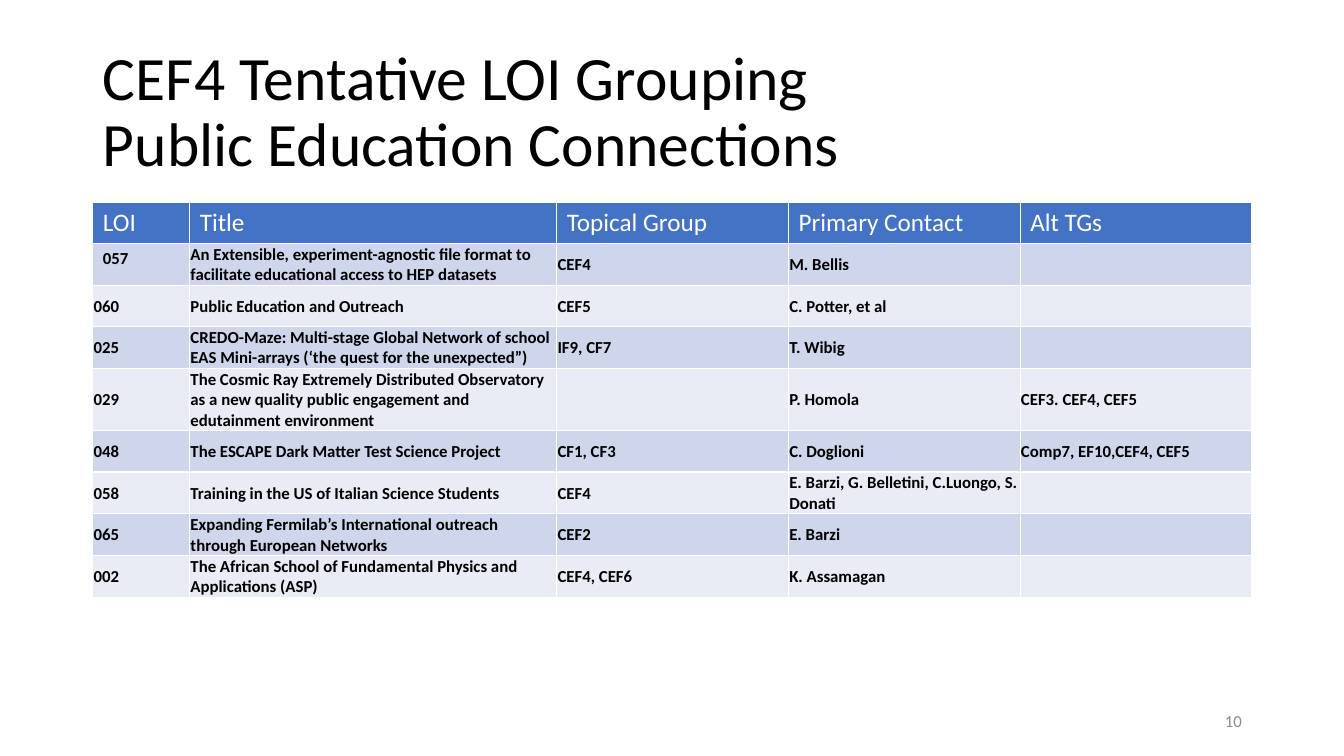
from pptx import Presentation
from pptx.dml.color import RGBColor
from pptx.enum.text import MSO_ANCHOR as Anchor, MSO_AUTO_SIZE as Fit, PP_ALIGN as Align
from pptx.util import Cm, Pt

HEADS = ["LOI", "Title", "Topical Group", "Primary Contact", "Alt TGs"]
LOIS = [
    ["057", "An Extensible, experiment-agnostic file format to facilitate educational access to HEP datasets",
     "CEF4", "M. Bellis", ""],
    ["060", "Public Education and Outreach", "CEF5", "C. Potter, et al", ""],
    ["025", "CREDO-Maze: Multi-stage Global Network of school EAS Mini-arrays (‘the quest for the unexpected”)",
     "IF9, CF7", "T. Wibig", ""],
    ["029", "The Cosmic Ray Extremely Distributed Observatory as a new quality public engagement and "
     "edutainment environment", "", "P. Homola", "CEF3. CEF4, CEF5"],
    ["048", "The ESCAPE Dark Matter Test Science Project", "CF1, CF3", "C. Doglioni",
     "Comp7, EF10,CEF4, CEF5"],
    ["058", "Training in the US of Italian Science Students", "CEF4",
     "E. Barzi, G. Belletini, C.Luongo, S. Donati", ""],
    ["065", "Expanding Fermilab’s International outreach through European Networks", "CEF2", "E. Barzi", ""],
    ["002", "The African School of Fundamental Physics and Applications (ASP)", "CEF4, CEF6",
     "K. Assamagan", ""],
]
WIDTHS = [2.44, 9.25, 5.84, 5.84, 5.84]
LEFT, WIDE = 2.34, 29.21


def color(code):
    return RGBColor.from_string(code)


def write(frame, text, size=12, ink="000000", bold=False, align=Align.LEFT, space=None, face="Calibri"):
    frame.text = text
    for para in frame.paragraphs:
        para.alignment = align
        para.line_spacing = space
        for run in para.runs:
            font = run.font
            font.name, font.size, font.bold = face, Pt(size), bold
            font.color.rgb = color(ink)


class Deck:
    blue = "4472C4"
    bands = ["CFD5EA", "E9EBF5"]
    gray = "8C8C8C"

    def __init__(self):
        self.show = Presentation()
        self.show.slide_width, self.show.slide_height = Cm(33.87), Cm(19.05)
        self.slide = self.show.slides.add_slide(self.show.slide_layouts[5])

    def title(self, text, x, y, w, h):
        shape = self.slide.shapes.title
        shape.left, shape.top, shape.width, shape.height = Cm(x), Cm(y), Cm(w), Cm(h)
        frame = shape.text_frame
        frame.auto_size, frame.vertical_anchor = Fit.NONE, Anchor.MIDDLE
        write(frame, text, size=44, space=0.9)

    def cell(self, cell, text, fill, tight=True, **style):
        cell.fill.solid()
        cell.fill.fore_color.rgb = color(fill)
        if not text:
            return
        if tight:
            cell.vertical_anchor = Anchor.MIDDLE
            cell.margin_left = cell.margin_right = cell.margin_top = Cm(0.02)
            cell.margin_bottom = Cm(0)
        write(cell.text_frame, text, **style)

    def table(self, heads, rows, widths, x, y, high):
        count = len(rows) + 1
        grid = self.slide.shapes.add_table(
            count, len(heads), Cm(x), Cm(y), Cm(sum(widths)), Cm(high * count)).table
        for col, width in zip(grid.columns, widths):
            col.width = Cm(width)
        for row in grid.rows:
            row.height = Cm(high)
        for c, head in enumerate(heads):
            self.cell(grid.cell(0, c), head, self.blue, tight=False, size=18, ink="FFFFFF")
        for r, row in enumerate(rows):
            for c, text in enumerate(row):
                self.cell(grid.cell(r + 1, c), text, self.bands[r % 2], tight=r + c > 0, bold=True)

    def number(self, text, x, y, w, h):
        frame = self.slide.shapes.add_textbox(Cm(x), Cm(y), Cm(w), Cm(h)).text_frame
        frame.word_wrap, frame.vertical_anchor = True, Anchor.MIDDLE
        write(frame, text, ink=self.gray, align=Align.RIGHT)

    def save(self):
        self.show.save("out.pptx")


def main():
    deck = Deck()
    deck.title("CEF4 Tentative LOI Grouping\vPublic Education Connections", LEFT, 1.02, WIDE, 3.68)
    deck.table(HEADS, LOIS, WIDTHS, LEFT, 5.1, 1.04)
    deck.number("10", 23.93, 17.65, 7.62, 1.02)
    deck.save()


if __name__ == "__main__":
    main()
